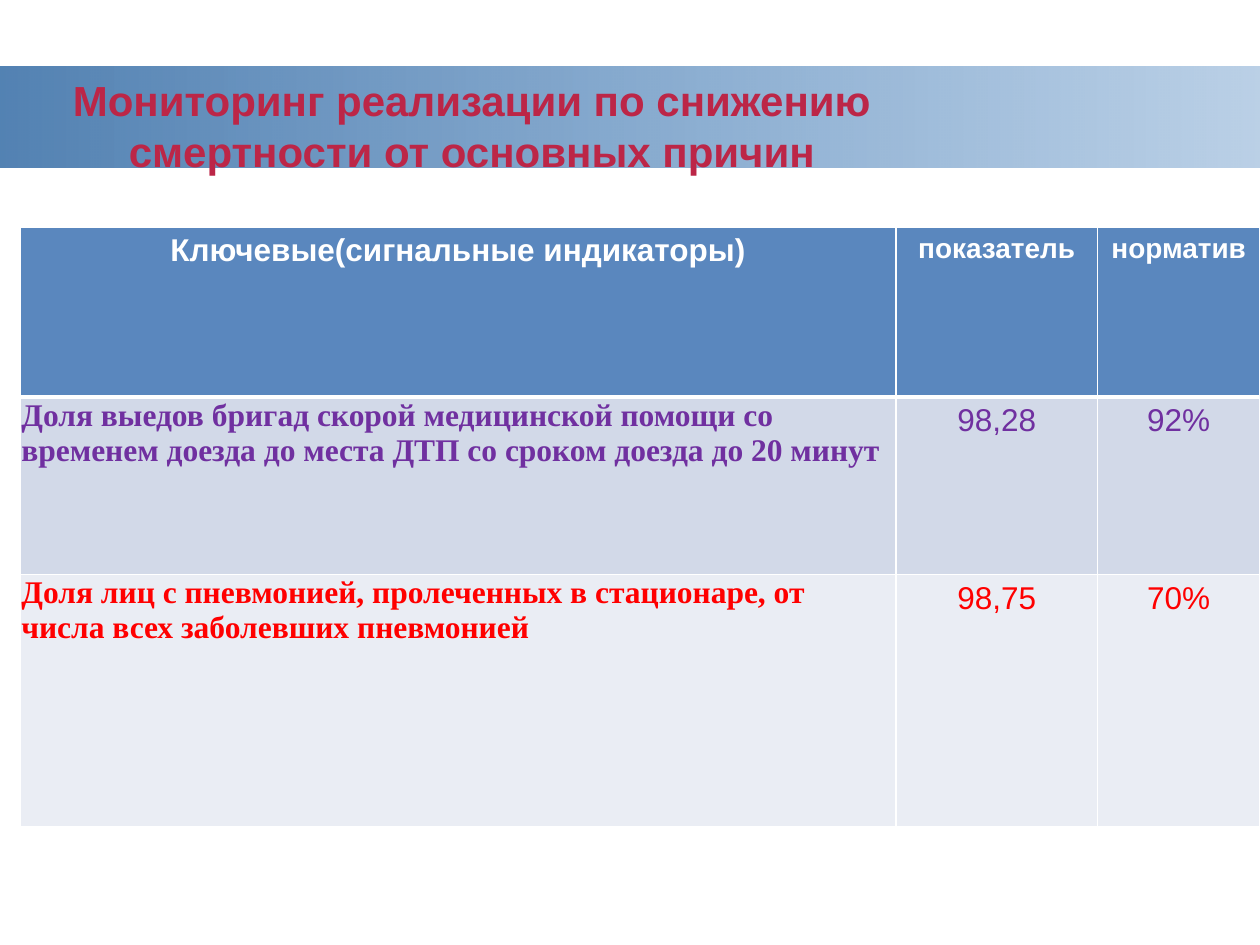
from dataclasses import dataclass

from lxml import etree
from pptx import Presentation
from pptx.dml.color import RGBColor
from pptx.enum.shapes import MSO_SHAPE
from pptx.enum.text import MSO_ANCHOR, MSO_AUTO_SIZE, PP_ALIGN
from pptx.oxml.ns import qn
from pptx.util import Inches, Pt

RECTANGLE = MSO_SHAPE.RECTANGLE
MIDDLE = MSO_ANCHOR.MIDDLE
NO_AUTOFIT = MSO_AUTO_SIZE.NONE
CENTER, LEFT = PP_ALIGN.CENTER, PP_ALIGN.LEFT


@dataclass(frozen=True)
class Theme:
    sans: str = "Arial"
    serif: str = "Times New Roman"
    title: str = "BC2647"
    band: tuple = (("00478F", 68), ("0052A4", 27))  # colour, opacity in percent
    header_fill: str = "5A87BE"
    row_fills: tuple = ("D2D9E8", "EAEDF4")
    row_texts: tuple = ("7030A0", "FF0000")
    white: str = "FFFFFF"
    title_size: int = 24
    body_size: int = 18
    small_size: int = 16


THEME = Theme()


def style(paragraph, font_name, size, color, bold, alignment):
    paragraph.alignment = alignment
    paragraph.font.name = font_name
    paragraph.font.size = Pt(size)
    paragraph.font.bold = bold
    paragraph.font.color.rgb = RGBColor.from_string(color)


def set_borders(cell, bottom_width):
    properties = cell._tc.get_or_add_tcPr()
    widths = {"a:lnL": 1, "a:lnR": 1, "a:lnT": 1, "a:lnB": bottom_width}
    for position, (side, width) in enumerate(widths.items()):
        line = etree.Element(qn(side), w=str(Pt(width)))
        fill = etree.SubElement(line, qn("a:solidFill"))
        etree.SubElement(fill, qn("a:srgbClr"), val=THEME.white)
        properties.insert(position, line)


presentation = Presentation()
presentation.slide_width = Inches(10)
presentation.slide_height = Inches(7.5)
slide = presentation.slides.add_slide(presentation.slide_layouts[5])

# Gradient band, behind the title
band = slide.shapes.add_shape(RECTANGLE, 0, Inches(0.53), Inches(10), Inches(0.8))
band.shadow.inherit = False
band.line.fill.background()
band.fill.gradient()
band.fill.gradient_angle = 0
for stop, (color, opacity) in zip(band.fill.gradient_stops, THEME.band):
    stop.color.rgb = RGBColor.from_string(color)
for stop_color, (color, opacity) in zip(band._element.spPr.iter(qn("a:srgbClr")), THEME.band):
    etree.SubElement(stop_color, qn("a:alpha"), val=str(opacity * 1000))
slide.shapes._spTree.insert(2, band._element)

# Title
title = slide.shapes.title
title.left, title.top = Inches(0.23), Inches(0.47)
title.width, title.height = Inches(7.03), Inches(1.05)
title.text_frame.text = "Мониторинг реализации по снижению смертности от основных причин"
title.text_frame.word_wrap = True
title.text_frame.auto_size = NO_AUTOFIT
title.text_frame.vertical_anchor = MIDDLE
style(title.text_frame.paragraphs[0], THEME.sans, THEME.title_size, THEME.title, True, CENTER)

# Indicator table
indicators = [
    ("Ключевые(сигнальные индикаторы)", "показатель", "норматив"),
    ("Доля выедов бригад скорой медицинской помощи со временем доезда "
     "до места ДТП со сроком доезда до 20 минут", "98,28", "92%"),
    ("Доля лиц с пневмонией, пролеченных в стационаре, от числа всех "
     "заболевших пневмонией", "98,75", "70%"),
]
column_widths = (6.95, 1.6, 1.29)
row_heights = (1.35, 1.41, 2)
table = slide.shapes.add_table(
    len(row_heights), len(column_widths), Inches(0.16), Inches(1.8),
    Inches(sum(column_widths)), Inches(sum(row_heights))).table
for column, width in zip(table.columns, column_widths):
    column.width = Inches(width)
for row, height in zip(table.rows, row_heights):
    row.height = Inches(height)

for row_index, texts in enumerate(indicators):
    is_header = row_index == 0
    fill_color = THEME.header_fill if is_header else THEME.row_fills[row_index - 1]
    text_color = THEME.white if is_header else THEME.row_texts[row_index - 1]
    for column_index, text in enumerate(texts):
        is_first = column_index == 0
        is_description = is_first and not is_header
        cell = table.cell(row_index, column_index)
        cell.text = text
        cell.fill.solid()
        cell.fill.fore_color.rgb = RGBColor.from_string(fill_color)
        set_borders(cell, 3 if is_header else 1)
        if is_description:
            cell.margin_left = cell.margin_top = cell.margin_right = Inches(0.01)
            cell.margin_bottom = 0
        style(
            cell.text_frame.paragraphs[0],
            THEME.serif if is_description else THEME.sans,
            THEME.small_size if is_header and not is_first else THEME.body_size,
            text_color,
            is_header or is_first,
            LEFT if is_description else CENTER,
        )

presentation.save("out.pptx")
